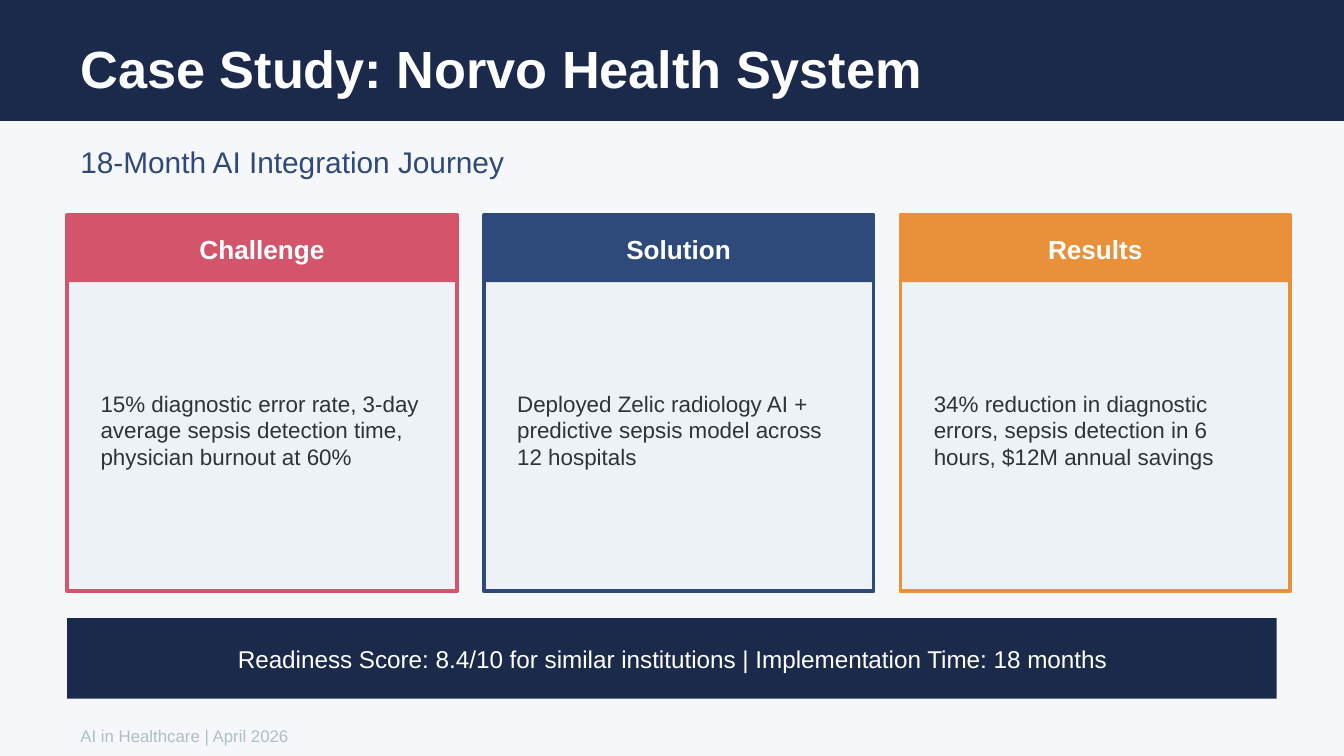
"""Build the health system case study slide."""
import pptx
import pptx.dml.color
import pptx.enum.shapes
import pptx.enum.text
import pptx.util

Inches = pptx.util.Inches
ALIGN = pptx.enum.text.PP_ALIGN
HUES = {
    "page": "F5F7FA",
    "navy": "1B2A4A",
    "blue": "2E4A7A",
    "red": "D4556B",
    "orange": "E8913A",
    "card": "EDF2F7",
    "ink": "2D3436",
    "mist": "B0BEC5",
    "white": "FFFFFF",
}
CARDS = [
    ("Challenge", "red", "15% diagnostic error rate, 3-day average sepsis "
     "detection time, physician burnout at 60%"),
    ("Solution", "blue", "Deployed Zelic radiology AI + predictive sepsis "
     "model across 12 hospitals"),
    ("Results", "orange", "34% reduction in diagnostic errors, sepsis "
     "detection in 6 hours, $12M annual savings"),
]


def get_hue(name):
    return pptx.dml.color.RGBColor.from_string(HUES[name])


def write(shape, text, size, hue, bold=False, align=ALIGN.LEFT):
    frame = shape.text_frame
    frame.word_wrap = True
    frame.auto_size = pptx.enum.text.MSO_AUTO_SIZE.NONE
    frame.vertical_anchor = pptx.enum.text.MSO_ANCHOR.MIDDLE
    para = frame.paragraphs[0]
    para.alignment = align
    run = para.add_run()
    run.text = text
    run.font.name = "Arial"
    run.font.size = pptx.util.Pt(size)
    run.font.bold = bold
    run.font.color.rgb = get_hue(hue)


def add_rect(slide, left, top, width, height, fill, edge=None):
    rect = slide.shapes.add_shape(
        pptx.enum.shapes.MSO_SHAPE.RECTANGLE,
        Inches(left), Inches(top), Inches(width), Inches(height))
    rect.shadow.inherit = False
    rect.fill.solid()
    rect.fill.fore_color.rgb = get_hue(fill)
    if edge:
        rect.line.color.rgb = get_hue(edge)
        rect.line.width = pptx.util.Pt(2)
    else:
        rect.line.fill.background()
    return rect


def add_text(slide, left, top, width, height, text, size, hue):
    box = slide.shapes.add_textbox(
        Inches(left), Inches(top), Inches(width), Inches(height))
    write(box, text, size, hue)


def add_title(slide, text):
    band = add_rect(slide, 0, 0, 10, 0.9, "navy")
    title = slide.shapes.title
    band.element.addnext(title.element)
    title.left, title.top = Inches(0.5), Inches(0.2)
    title.width, title.height = Inches(9), Inches(0.6)
    write(title, text, 28, "white", True)


def add_card(slide, left, head, hue, body):
    add_rect(slide, left, 1.6, 2.9, 2.8, "card", hue)
    bar = add_rect(slide, left, 1.6, 2.9, 0.5, hue)
    write(bar, head, 14, "white", True, ALIGN.CENTER)
    add_text(slide, left + 0.15, 2.2, 2.6, 2, body, 12, "ink")


def main():
    deck = pptx.Presentation()
    deck.slide_width = Inches(10)
    deck.slide_height = Inches(10 * 9 / 16)
    slide = deck.slides.add_slide(deck.slide_layouts[5])
    slide.background.fill.solid()
    slide.background.fill.fore_color.rgb = get_hue("page")

    add_title(slide, "Case Study: Norvo Health System")
    add_text(slide, 0.5, 1, 9, 0.4, "18-Month AI Integration Journey",
             16, "blue")
    for index, (head, hue, body) in enumerate(CARDS):
        add_card(slide, 0.5 + 3.1 * index, head, hue, body)
    score = add_rect(slide, 0.5, 4.6, 9, 0.6, "navy")
    write(score, "Readiness Score: 8.4/10 for similar institutions | "
          "Implementation Time: 18 months", 13, "white", align=ALIGN.CENTER)
    add_text(slide, 0.5, 5.35, 9, 0.25, "AI in Healthcare | April 2026",
             9, "mist")
    deck.save("out.pptx")


if __name__ == "__main__":
    main()
